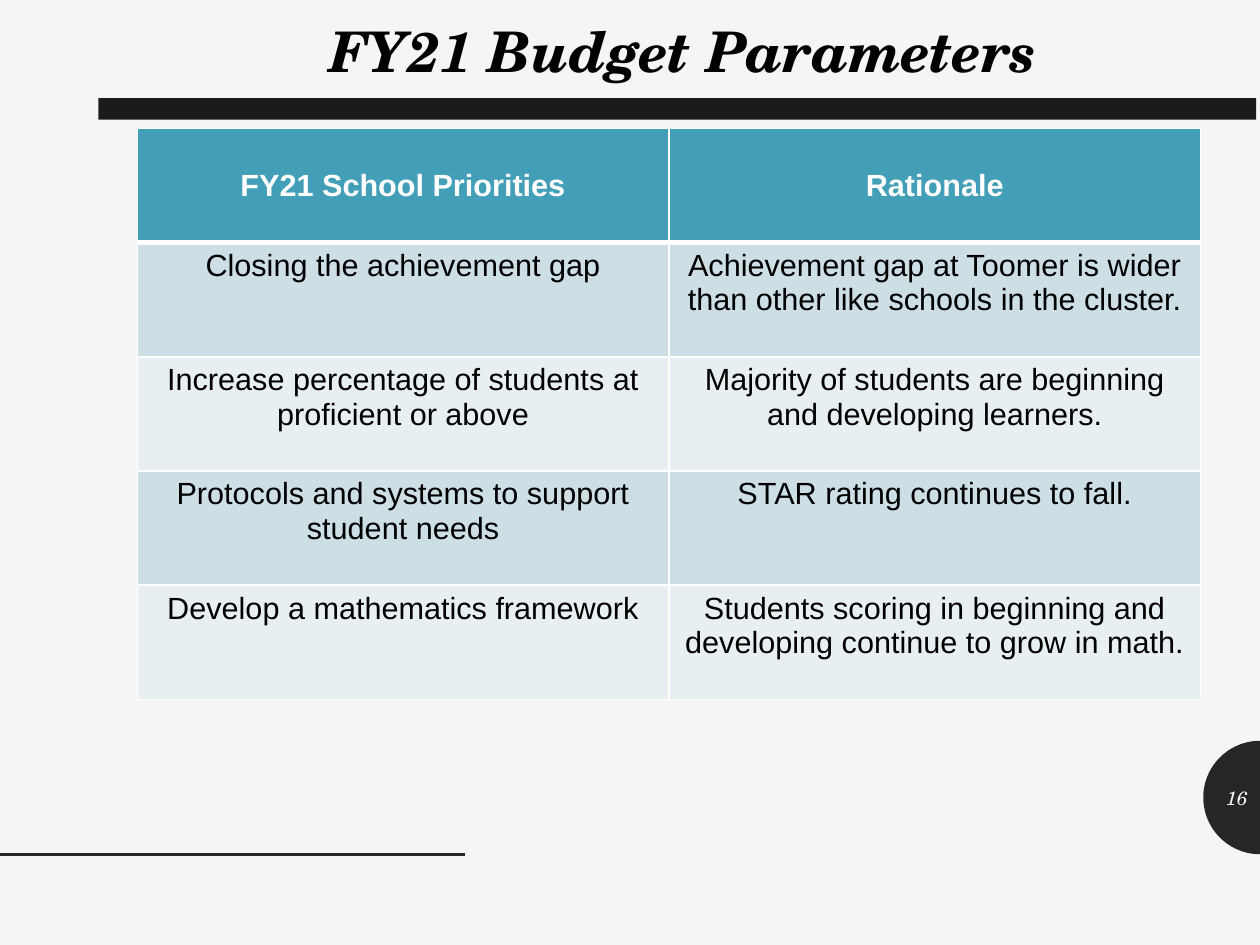
"""Build the FY21 Budget Parameters slide with its table of priorities and rationale."""
import math

import lxml.etree
import pptx
import pptx.dml.color
import pptx.enum.shapes
import pptx.enum.text
import pptx.oxml.ns
import pptx.util

THEME = {
    "background": "F5F5F5", "dark": "262626", "bar": "1D1A1D", "text": "000000",
    "white": "FFFFFF", "header": "439EB7", "bands": ["CDDEE5", "E8EFF3"],
    "title_font": "TeX Gyre Schola", "body_font": "Arial",
    "title_size": 32, "table_size": 17.5, "number_size": 11,
}
PRIORITIES = [
    ("FY21 School Priorities", "Rationale"),
    ("Closing the achievement gap",
     "Achievement gap at Toomer is wider than other like schools in the cluster."),
    ("Increase percentage of students at proficient or above",
     "Majority of students are beginning and developing learners."),
    ("Protocols and systems to support student needs", "STAR rating continues to fall."),
    ("Develop a mathematics framework",
     "Students scoring in beginning and developing continue to grow in math."),
]
ALIGN = pptx.enum.text.PP_ALIGN
ANCHOR = pptx.enum.text.MSO_ANCHOR
color = pptx.dml.color.RGBColor.from_string


def write(text_frame, text, alignment, font, size, ink, bold=False, italic=False):
    """Put one formatted paragraph into a text frame."""
    text_frame.text = text
    text_frame.word_wrap = True
    paragraph = text_frame.paragraphs[0]
    paragraph.alignment = alignment
    run_font = paragraph.runs[0].font
    run_font.name, run_font.size = font, pptx.util.Pt(size)
    run_font.bold, run_font.italic = bold, italic
    run_font.color.rgb = color(ink)


def add_border(cell, side, points):
    """Draw one side of a table cell in white."""
    line = lxml.etree.SubElement(
        cell._tc.get_or_add_tcPr(), pptx.oxml.ns.qn(f"a:ln{side}"), w=str(pptx.util.Pt(points)))
    fill = lxml.etree.SubElement(line, pptx.oxml.ns.qn("a:solidFill"))
    lxml.etree.SubElement(fill, pptx.oxml.ns.qn("a:srgbClr"), val=THEME["white"])


presentation = pptx.Presentation()
presentation.slide_width = pptx.util.Inches(10)
presentation.slide_height = pptx.util.Inches(7.5)
column = presentation.slide_width // 100
row = presentation.slide_height // 75

slide = presentation.slides.add_slide(presentation.slide_layouts[5])
slide.background.fill.solid()
slide.background.fill.fore_color.rgb = color(THEME["background"])

title = slide.shapes.title
title.left, title.top = int(9.6 * column), int(0.8 * row)
title.width, title.height = int(89.3 * column), int(6.4 * row)
write(title.text_frame, "FY21 Budget Parameters", ALIGN.CENTER, THEME["title_font"],
      THEME["title_size"], THEME["text"], bold=True, italic=True)
title.text_frame.vertical_anchor = ANCHOR.MIDDLE
title.text_frame.auto_size = pptx.enum.text.MSO_AUTO_SIZE.NONE

radius, center_row, steps = 4.5, 63.3, 48
angles = [math.pi * (0.5 + step / steps) for step in range(steps + 1)]
arc = [(int((100 + radius * math.cos(angle)) * column),
        int((center_row + radius * math.sin(angle)) * row)) for angle in angles]
builder = slide.shapes.build_freeform(*arc[0])
builder.add_line_segments(arc[1:], close=True)
half_disc = builder.convert_to_shape()

bar = slide.shapes.add_shape(
    pptx.enum.shapes.MSO_SHAPE.RECTANGLE,
    int(7.8 * column), int(7.8 * row), int(91.9 * column), int(1.7 * row))
for shape, fill_color in ((half_disc, THEME["dark"]), (bar, THEME["bar"])):
    shape.shadow.inherit = False
    shape.fill.solid()
    shape.fill.fore_color.rgb = color(fill_color)
    shape.line.fill.background()

rule_top = int((center_row + radius) * row)
rule = slide.shapes.add_connector(
    pptx.enum.shapes.MSO_CONNECTOR.STRAIGHT, 0, rule_top, int(36.9 * column), rule_top)
rule.line.color.rgb = color(THEME["dark"])
rule.line.width = pptx.util.Pt(2)
lxml.etree.SubElement(rule._element.spPr, pptx.oxml.ns.qn("a:effectLst"))

table = slide.shapes.add_table(
    len(PRIORITIES), 2, int(10.9 * column), int(10.2 * row),
    int(84.4 * column), int(45.3 * row)).table
for row_index, texts in enumerate(PRIORITIES):
    is_header = row_index == 0
    for column_index, text in enumerate(texts):
        cell = table.cell(row_index, column_index)
        write(cell.text_frame, text, ALIGN.CENTER, THEME["body_font"], THEME["table_size"],
              THEME["white"] if is_header else THEME["text"], bold=is_header)
        cell.vertical_anchor = ANCHOR.MIDDLE if is_header else ANCHOR.TOP
        for side in "LRTB":
            thick = (row_index, side) in ((0, "B"), (1, "T"))
            add_border(cell, side, 3 if thick else 1)
        cell.fill.solid()
        cell.fill.fore_color.rgb = color(
            THEME["header"] if is_header else THEME["bands"][(row_index - 1) % 2])

page_number = slide.shapes.add_textbox(
    int(95.5 * column), int(61.3 * row), int(4.5 * column), int(4 * row))
write(page_number.text_frame, "16", ALIGN.RIGHT, THEME["title_font"],
      THEME["number_size"], THEME["background"], italic=True)
page_number.text_frame.vertical_anchor = ANCHOR.MIDDLE

presentation.save("out.pptx")
